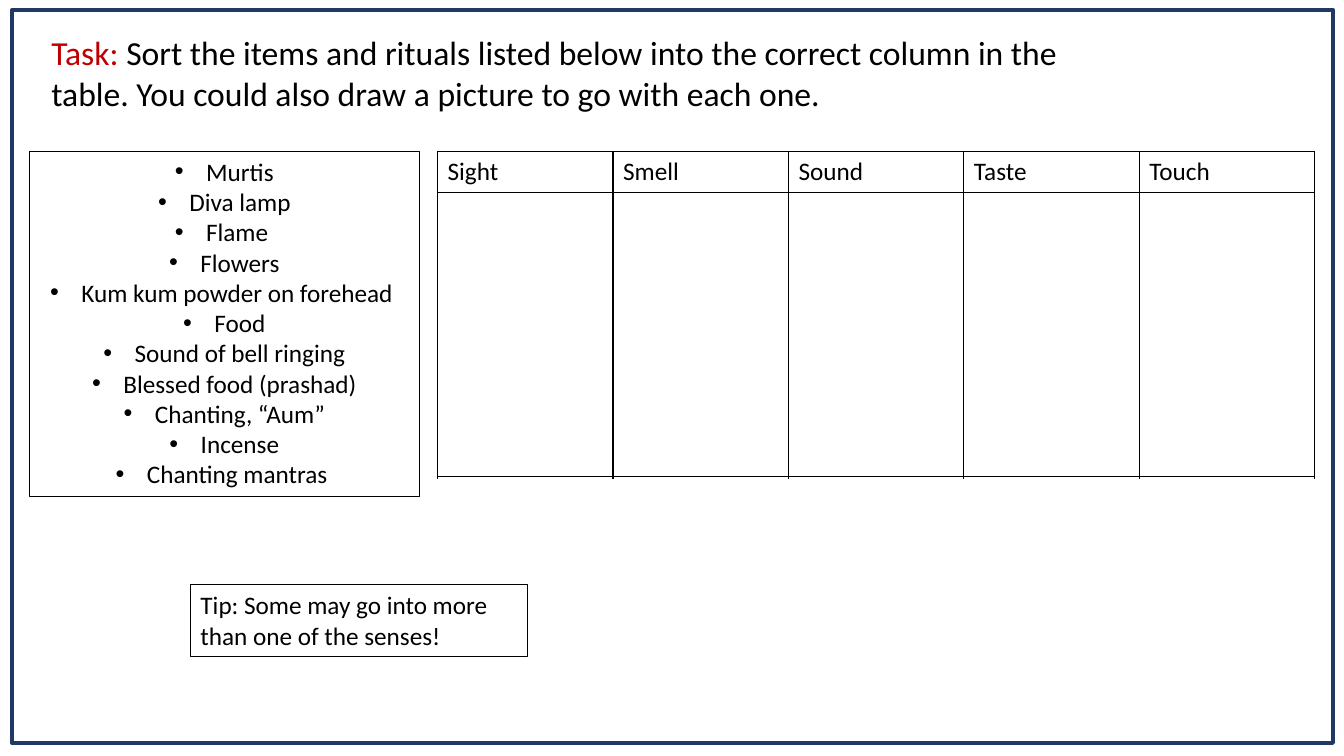
"""Build a worksheet slide for sorting items and rituals by sense."""
from dataclasses import dataclass
from typing import Optional

from lxml.etree import SubElement
from pptx import Presentation
from pptx.dml.color import RGBColor
from pptx.enum.shapes import MSO_SHAPE
from pptx.enum.text import MSO_ANCHOR, MSO_AUTO_SIZE, PP_ALIGN
from pptx.oxml import parse_xml
from pptx.oxml.ns import nsdecls, qn
from pptx.util import Inches, Pt

FONT = "Calibri"
COLORS = {"navy": "203864", "red": "C00000", "black": "000000", "white": "FFFFFF"}
ITEMS = (
    "Murtis", "Diva lamp", "Flame ", "Flowers", "Kum kum powder on forehead ",
    "Food", "Sound of bell ringing", "Blessed food (prashad)",
    "Chanting, “Aum”", "Incense", "Chanting mantras ",
)
SENSES = ("Sight", "Smell", "Sound", "Taste", "Touch")
ROWS = (0.41, 2.82, 0.41)
WIDTH = 1.74


@dataclass
class Box:
    """A rectangle with its outline, fill and lines of text."""
    left: float
    top: float
    width: float
    height: float
    line: str
    weight: float
    fill: Optional[str] = None
    lines: tuple[str, ...] = ()
    list: bool = False


FRAME = Box(0.12, 0.1, 13.1, 7.27, "navy", 3)
WORDS = Box(0.29, 1.5, 3.87, 3.43, "black", 0.75, lines=ITEMS, list=True)
MASK = Box(4.25, 4.76, 8.88, 1.12, "white", 1, fill="white")
TIP = Box(1.89, 5.8, 3.34, 0.71, "black", 0.75,
          lines=("Tip: Some may go into more than one of the senses!",))


def color(name: str) -> RGBColor:
    """Return a named colour."""
    return RGBColor.from_string(COLORS[name])


def style(font, size: float, name: str = "black") -> None:
    """Set the face, size and colour of a font."""
    font.name = FONT
    font.size = Pt(size)
    font.color.rgb = color(name)


def bullet(para) -> None:
    """Give a paragraph a hanging bullet."""
    props = para._p.get_or_add_pPr()
    props.set("marL", str(Inches(0.31)))
    props.set("indent", str(-Inches(0.31)))
    SubElement(props, qn("a:buFont")).set("typeface", "Arial")
    SubElement(props, qn("a:buChar")).set("char", "•")


def draw(slide, box: Box) -> None:
    """Draw a box and its text."""
    shape = slide.shapes.add_shape(
        MSO_SHAPE.RECTANGLE, Inches(box.left), Inches(box.top),
        Inches(box.width), Inches(box.height))
    shape.shadow.inherit = False
    shape.line.color.rgb = color(box.line)
    shape.line.width = Pt(box.weight)
    if box.fill:
        shape.fill.solid()
        shape.fill.fore_color.rgb = color(box.fill)
    else:
        shape.fill.background()
    if not box.lines:
        return
    frame = shape.text_frame
    frame.word_wrap = True
    frame.vertical_anchor = MSO_ANCHOR.TOP
    frame.auto_size = MSO_AUTO_SIZE.SHAPE_TO_FIT_TEXT
    frame.text = "\n".join(box.lines)
    for para in frame.paragraphs:
        para.alignment = PP_ALIGN.CENTER if box.list else PP_ALIGN.LEFT
        if box.list:
            bullet(para)
        style(para.font, 18)


def border(cell) -> None:
    """Put a thin black line on each side of a cell."""
    props = cell._tc.get_or_add_tcPr()
    for spot, side in enumerate("LRTB"):
        props.insert(spot, parse_xml(
            f'<a:ln{side} {nsdecls("a")} w="{Pt(1)}"><a:solidFill>'
            f'<a:srgbClr val="{COLORS["black"]}"/></a:solidFill></a:ln{side}>'))


def chart(slide) -> None:
    """Draw the table with one column for each sense."""
    table = slide.shapes.add_table(
        len(ROWS), len(SENSES), Inches(4.34), Inches(1.5),
        Inches(WIDTH * len(SENSES)), Inches(sum(ROWS))).table
    table.first_row = table.horz_banding = False
    for row, height in zip(table.rows, ROWS):
        row.height = Inches(height)
    for column in table.columns:
        column.width = Inches(WIDTH)
    for cell in table.iter_cells():
        cell.fill.background()
        border(cell)
    for spot, sense in enumerate(SENSES):
        cell = table.cell(0, spot)
        cell.text = sense
        style(cell.text_frame.paragraphs[0].font, 18)


def head(slide) -> None:
    """Place and fill the title."""
    title = slide.shapes.title
    title.left, title.top = Inches(0.41), Inches(0.27)
    title.width, title.height = Inches(10.49), Inches(0.91)
    frame = title.text_frame
    frame.word_wrap = True
    frame.vertical_anchor = MSO_ANCHOR.TOP
    frame.auto_size = MSO_AUTO_SIZE.SHAPE_TO_FIT_TEXT
    para = frame.paragraphs[0]
    para.alignment = PP_ALIGN.LEFT
    parts = (
        ("Task: ", "red"),
        ("Sort the items and rituals listed below into the correct column in the "
         "table. You could also draw a picture to go with each one.", "black"),
    )
    for text, name in parts:
        run = para.add_run()
        run.text = text
        style(run.font, 24, name)


def main() -> None:
    """Build and save the slide."""
    deck = Presentation()
    deck.slide_width, deck.slide_height = Inches(13.33), Inches(7.5)
    slide = deck.slides.add_slide(deck.slide_layouts[5])
    head(slide)
    draw(slide, FRAME)
    draw(slide, WORDS)
    chart(slide)
    draw(slide, MASK)
    draw(slide, TIP)
    deck.save("out.pptx")


if __name__ == "__main__":
    main()
